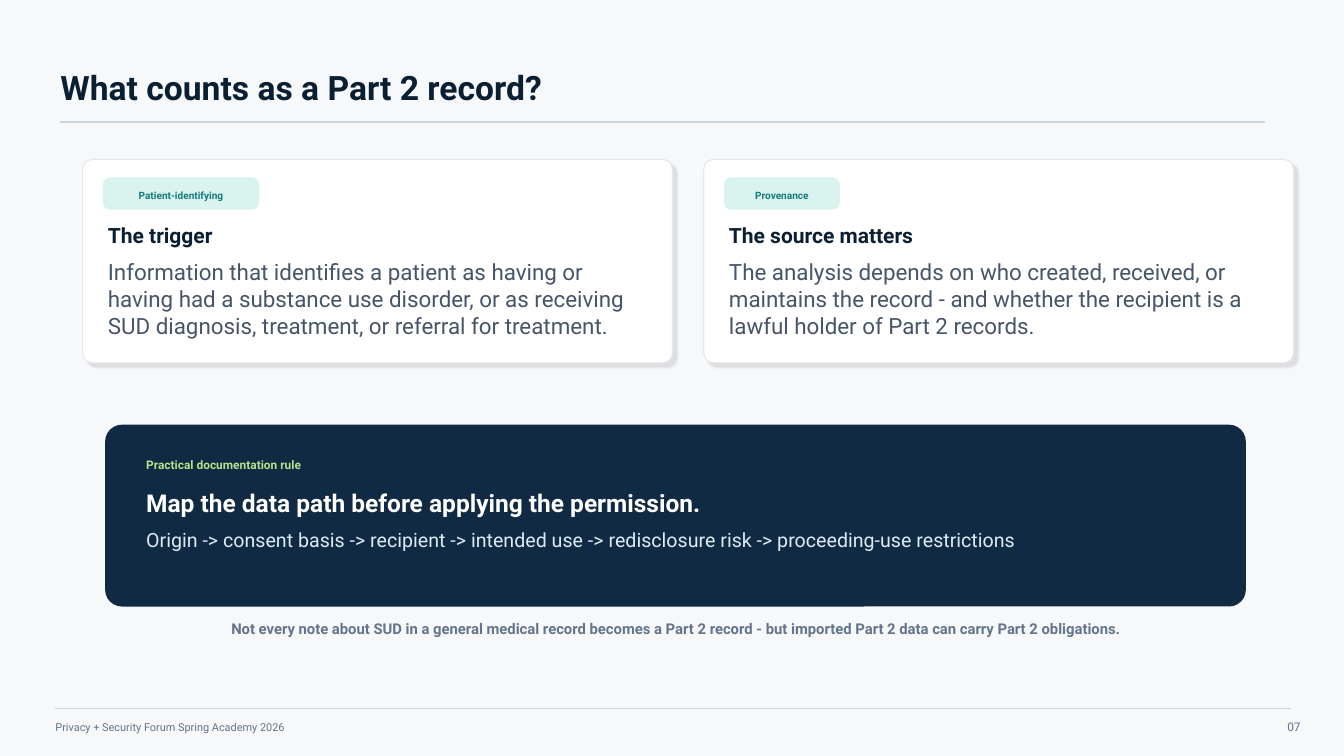
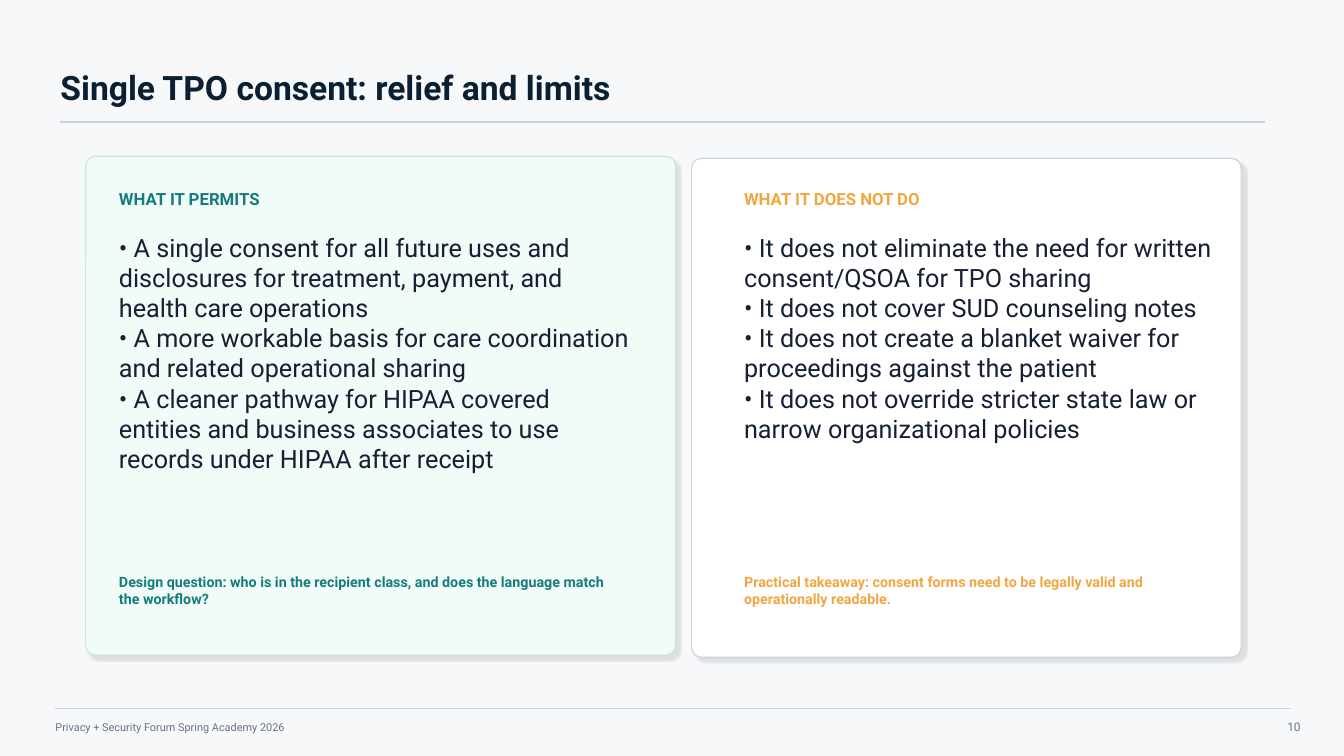
from lxml.etree import SubElement
from pptx import Presentation
from pptx.dml.color import RGBColor
from pptx.enum.shapes import MSO_CONNECTOR, MSO_SHAPE
from pptx.enum.text import MSO_ANCHOR, PP_ALIGN
from pptx.oxml.ns import qn
from pptx.util import Pt

EMU_PER_PX = 9144  # 100 px to the inch
FONT = "Roboto"
FOOTER = "Privacy + Security Forum Spring Academy 2026"

BACKGROUND = RGBColor(0xF6, 0xF8, 0xFA)
WHITE = RGBColor(0xFF, 0xFF, 0xFF)
INK = RGBColor(0x0B, 0x1F, 0x33)
BODY = RGBColor(0x47, 0x55, 0x69)
LIST_INK = RGBColor(0x15, 0x20, 0x33)
MUTED = RGBColor(0x64, 0x74, 0x8B)
RULE = RGBColor(0xCB, 0xD5, 0xE1)
CARD_EDGE = RGBColor(0xE5, 0xE7, 0xEB)
TEAL = RGBColor(0x14, 0x7C, 0x7C)
TAG_FILL = RGBColor(0xD9, 0xF4, 0xEE)
MINT = RGBColor(0xF1, 0xFB, 0xF8)
MINT_EDGE = RGBColor(0xC9, 0xE6, 0xDF)
AMBER = RGBColor(0xF2, 0xA5, 0x41)
NAVY = RGBColor(0x10, 0x2A, 0x43)
LIME = RGBColor(0xB7, 0xE2, 0x8A)
ICE = RGBColor(0xDD, 0xEC, 0xF2)


def px(*lengths):
    return [length * EMU_PER_PX for length in lengths]


class Deck:
    """Holds the presentation, its style and the current slide."""

    def __init__(self):
        self.presentation = Presentation()
        self.presentation.slide_width, self.presentation.slide_height = px(1333, 750)
        self.slide = None

    def new_slide(self, title, number):
        self.slide = self.presentation.slides.add_slide(self.presentation.slide_layouts[6])
        fill = self.slide.background.fill
        fill.solid()
        fill.fore_color.rgb = BACKGROUND
        # Title with rule
        self.text(60, 58, 1200, 56, title, 24, INK, bold=True)
        self.rule(60, 1255, 121, 0.8)
        # Footer
        self.rule(55, 1280, 703, 0.75)
        self.text(55, 710, 500, 22, FOOTER, 7.8, MUTED)
        self.text(1215, 708, 75, 25, number, 8.5, MUTED, align=PP_ALIGN.RIGHT)

    def text(self, left, top, width, height, content, size, color, bold=False,
             align=PP_ALIGN.LEFT, anchor=MSO_ANCHOR.MIDDLE):
        box = self.slide.shapes.add_textbox(*px(left, top, width, height))
        frame = box.text_frame
        frame.word_wrap = True
        frame.vertical_anchor = anchor
        frame.margin_left = frame.margin_right = 0
        frame.margin_top = frame.margin_bottom = 0
        frame.text = content
        for paragraph in frame.paragraphs:
            paragraph.alignment = align
            for run in paragraph.runs:
                run.font.name = FONT
                run.font.size = Pt(size)
                run.font.bold = bold
                run.font.color.rgb = color

    def rule(self, left, right, y, weight):
        line = self.slide.shapes.add_connector(MSO_CONNECTOR.STRAIGHT, *px(left, y, right, y))
        line.line.color.rgb = RULE
        line.line.width = Pt(weight)
        SubElement(line._element.spPr, qn("a:effectLst"))

    def panel(self, left, top, width, height, radius, fill, edge=None, weight=0.8, shadow=False):
        shape = self.slide.shapes.add_shape(
            MSO_SHAPE.ROUNDED_RECTANGLE, *px(left, top, width, height))
        shape.adjustments[0] = radius / min(width, height)
        shape.fill.solid()
        shape.fill.fore_color.rgb = fill
        if edge is None:
            shape.line.fill.background()
        else:
            shape.line.color.rgb = edge
            shape.line.width = Pt(weight)
        shape.shadow.inherit = False
        if shadow:
            self.drop_shadow(shape)

    def drop_shadow(self, shape):
        effects = shape._element.spPr.find(qn("a:effectLst"))
        outer = SubElement(effects, qn("a:outerShdw"), blurRad=str(Pt(1)), dist=str(Pt(4)),
                           dir=str(45 * 60000), algn="tl", rotWithShape="0")
        color = SubElement(outer, qn("a:srgbClr"), val="000000")
        SubElement(color, qn("a:alpha"), val="10000")

    def tagged_card(self, left, tag, tag_width, heading, body):
        self.panel(left, 158, 585, 202, 10, WHITE, CARD_EDGE, shadow=True)
        self.panel(left + 20, 176, tag_width, 32, 7, TAG_FILL)
        self.text(left + 28, 183, tag_width - 16, 22, tag, 7.2, TEAL,
                  bold=True, align=PP_ALIGN.CENTER)
        self.text(left + 25, 216, 535, 35, heading, 15, INK, bold=True)
        self.text(left + 25, 256, 535, 92, body, 16, BODY, anchor=MSO_ANCHOR.TOP)

    def list_card(self, left, top, width, inset, list_width, note_width,
                  fill, edge, accent, heading, points, note):
        self.panel(left, top, width, 495, 10, fill, edge, shadow=True)
        text_left = left + inset
        self.text(text_left, 185, 220, 25, heading, 12, accent, bold=True)
        bullets = "\n".join("• " + point for point in points)
        self.text(text_left, 230, list_width, 300, bullets, 18, LIST_INK, anchor=MSO_ANCHOR.TOP)
        self.text(text_left, 570, note_width, 32, note, 10.2, accent, bold=True)


def build_record_slide(deck):
    deck.new_slide("What counts as a Part 2 record?", "07")
    deck.tagged_card(
        82, "Patient-identifying", 155, "The trigger",
        "Information that identifies a patient as having or having had a substance use "
        "disorder, or as receiving SUD diagnosis, treatment, or referral for treatment.")
    deck.tagged_card(
        698, "Provenance", 115, "The source matters",
        "The analysis depends on who created, received, or maintains the record - and "
        "whether the recipient is a lawful holder of Part 2 records.")
    # Documentation rule
    deck.panel(105, 422, 1130, 179, 16, NAVY, NAVY, weight=1)
    deck.text(145, 450, 320, 22, "Practical documentation rule", 8.5, LIME, bold=True)
    deck.text(145, 482, 620, 34, "Map the data path before applying the permission.",
              17.5, WHITE, bold=True)
    deck.text(145, 522, 1060, 26,
              "Origin -> consent basis -> recipient -> intended use -> redisclosure risk "
              "-> proceeding-use restrictions", 14, ICE)
    # Closing remark
    deck.text(105, 606, 1130, 36,
              "Not every note about SUD in a general medical record becomes a Part 2 record "
              "- but imported Part 2 data can carry Part 2 obligations.",
              10.6, MUTED, bold=True, align=PP_ALIGN.CENTER)


def build_consent_slide(deck):
    deck.new_slide("Single TPO consent: relief and limits", "10")
    deck.list_card(
        85, 155, 585, 33, 510, 505, MINT, MINT_EDGE, TEAL, "WHAT IT PERMITS",
        ["A single consent for all future uses and disclosures for treatment, payment, "
         "and health care operations",
         "A more workable basis for care coordination and related operational sharing",
         "A cleaner pathway for HIPAA covered entities and business associates to use "
         "records under HIPAA after receipt"],
        "Design question: who is in the recipient class, and does the language match "
        "the workflow?")
    deck.list_card(
        686, 157, 545, 52, 465, 475, WHITE, RULE, AMBER, "WHAT IT DOES NOT DO",
        ["It does not eliminate the need for written consent/QSOA for TPO sharing",
         "It does not cover SUD counseling notes",
         "It does not create a blanket waiver for proceedings against the patient",
         "It does not override stricter state law or narrow organizational policies"],
        "Practical takeaway: consent forms need to be legally valid and operationally "
        "readable.")


def main():
    deck = Deck()
    build_record_slide(deck)
    build_consent_slide(deck)
    deck.presentation.save("out.pptx")


if __name__ == "__main__":
    main()
